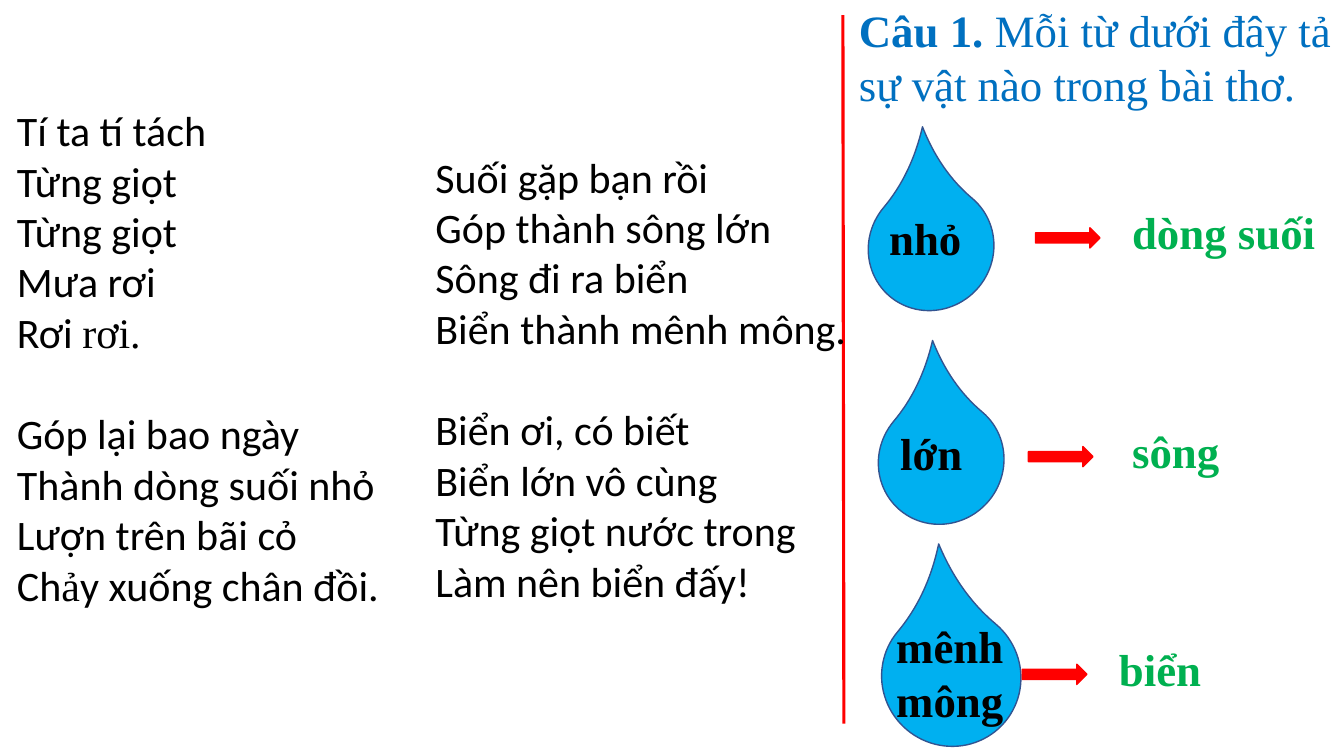
from lxml import etree
from pptx import Presentation
from pptx.dml.color import RGBColor
from pptx.enum.shapes import MSO_CONNECTOR, MSO_SHAPE
from pptx.oxml.ns import qn
from pptx.util import Inches, Pt

STRAIGHT = MSO_CONNECTOR.STRAIGHT
TEARDROP = MSO_SHAPE.TEAR
DOWN_ARROW = MSO_SHAPE.DOWN_ARROW

SANS = "Calibri"
SERIF = "Times New Roman"
BLACK = "000000"
RED = "FF0000"
BLUE = "0070C0"
GREEN = "00B050"
WATER = "00B0F0"
WATER_EDGE = "325491"
POEM_SIZE = 30
LABEL_SIZE = 32
STANZA_GAP = 36.6

LEFT_STANZAS = [
    [("Tí ta tí tách\nTừng giọt\nTừng giọt\nMưa rơi\nRơi ", SANS), ("rơi.", SERIF)],
    [("Góp lại bao ngày\nThành dòng suối nhỏ\nLượn trên bãi cỏ\nCh", SANS),
     ("ả", SERIF), ("y xuống chân đồi.", SANS)],
]
RIGHT_STANZAS = [
    [("Suối gặp bạn rồi\nGóp thành sông lớn\nSông đi ra biển\nBiển thành mênh mông.", SANS)],
    [("Biển ơi, có biết\nBiển lớn vô cùng\nTừng giọt nước trong\nLàm nên biển đấy!", SANS)],
]
MATCHES = [
    ("nhỏ", (8.6, 1.84, 1.27, 1.23), (8.72, 2.04, 2.23, 0.64),
     (10.49, 2.04), "dòng suối", (11.13, 1.98)),
    ("lớn", (8.7, 3.96, 1.27, 1.23), (8.83, 4.17, 2.23, 0.64),
     (10.42, 4.21), "sông", (11.13, 4.15)),
    ("mênh mông", (8.75, 6.02, 1.37, 1.39), (8.79, 6.09, 2.28, 1.18),
     (10.36, 6.37), "biển", (11, 6.32)),
]


def color(value):
    return RGBColor.from_string(value)


def inches(values):
    return [Inches(value) for value in values]


def add_text_box(page, bounds):
    box = page.shapes.add_textbox(*inches(bounds))
    box.text_frame.word_wrap = True
    return box.text_frame


def add_span(para, text, font, size, tint, bold=False):
    for index, line in enumerate(text.split("\n")):
        if index:
            para.add_line_break()
        span = para.add_run()
        span.text = line
        span.font.name = font
        span.font.size = Pt(size)
        span.font.bold = bold
        span.font.color.rgb = color(tint)


def add_poem(page, bounds, stanzas):
    frame = add_text_box(page, bounds)
    for index, stanza in enumerate(stanzas):
        para = frame.add_paragraph() if index else frame.paragraphs[0]
        if index:
            para.space_before = Pt(STANZA_GAP)
        for text, font in stanza:
            add_span(para, text, font, POEM_SIZE, BLACK)


def add_label(page, bounds, tint, *parts):
    para = add_text_box(page, bounds).paragraphs[0]
    for text, bold in parts:
        add_span(para, text, SERIF, LABEL_SIZE, tint, bold)


def add_turned_shape(page, kind, bounds, rotation, fill, edge):
    shape = page.shapes.add_shape(kind, *inches(bounds))
    shape.rotation = rotation
    shape.shadow.inherit = False
    shape.fill.solid()
    shape.fill.fore_color.rgb = color(fill)
    shape.line.color.rgb = color(edge)
    shape.line.width = Pt(1)
    return shape


def add_divider(page):
    line = page.shapes.add_connector(STRAIGHT, *inches((8.36, 0.15, 8.37, 7.18)))
    line.line.color.rgb = color(RED)
    line.line.width = Pt(2.25)
    etree.SubElement(line._element.spPr, qn("a:effectLst"))


def add_match(page, word, drop_bounds, word_bounds, arrow_corner, answer, answer_corner):
    drop = add_turned_shape(page, TEARDROP, drop_bounds, 310, WATER, WATER_EDGE)
    drop.adjustments[0] = 1.358
    add_label(page, word_bounds, BLACK, (word, True))
    add_turned_shape(page, DOWN_ARROW, (*arrow_corner, 0.2, 0.64), 270, RED, RED)
    add_label(page, (*answer_corner, 2.23, 0.64), GREEN, (answer, True))


def main():
    deck = Presentation()
    deck.slide_width = Inches(13.33)
    deck.slide_height = Inches(7.5)
    page = deck.slides.add_slide(deck.slide_layouts[6])
    add_divider(page)
    add_poem(page, (0.07, 0.99, 4.58, 5.65), LEFT_STANZAS)
    add_poem(page, (4.22, 1.45, 4.89, 5.65), RIGHT_STANZAS)
    add_label(page, (8.42, -0.02, 5.08, 1.18), BLUE, ("Câu 1. ", True),
              ("Mỗi từ dưới đây tả sự vật nào trong bài thơ.", False))
    for match in MATCHES:
        add_match(page, *match)
    deck.save("out.pptx")


if __name__ == "__main__":
    main()
